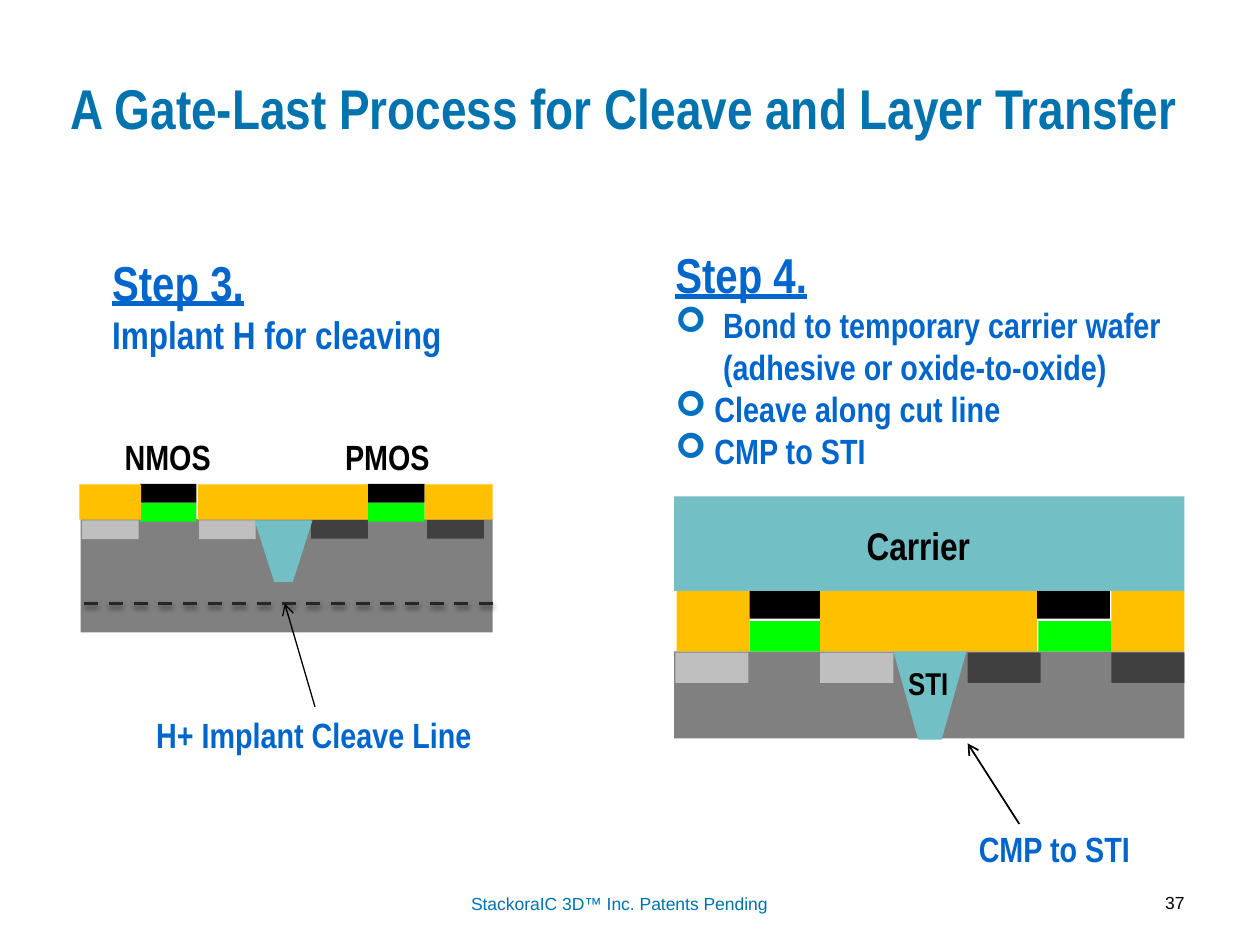
from lxml.etree import SubElement
from pptx import Presentation
from pptx.dml.color import RGBColor
from pptx.enum.dml import MSO_LINE
from pptx.enum.shapes import MSO_CONNECTOR, MSO_SHAPE
from pptx.enum.text import MSO_ANCHOR, MSO_AUTO_SIZE, PP_ALIGN
from pptx.oxml.ns import qn
from pptx.util import Inches, Pt

NARROW = "Arial Narrow"
BLUE, TITLE, BLACK = "0066CC", "0073AE", "000000"
GRAY, LIGHT, DARK = "808080", "BFBFBF", "404040"
GREEN, GOLD, TEAL = "00FF00", "FFC000", "72BFC5"

HEAD = "A Gate-Last Process for Cleave and Layer Transfer"
STEPS = [
    ((0.79, 1.95, 3.04, 0.94), "Step 3.", 22,
     [("Implant H for cleaving", 0)]),
    ((5.26, 1.89, 4.17, 1.92), "Step 4.", 20,
     [("Bond to temporary carrier wafer (adhesive or oxide-to-oxide)", 0.38),
      ("Cleave along cut line", 0.31),
      ("CMP to STI", 0.31)]),
]

# fill, top, height, [(left, width), ...]
LEFT = [
    (GRAY, 4.12, 0.9, [(0.64, 3.27)]),
    (LIGHT, 4.13, 0.15, [(0.65, 0.45), (1.58, 0.45)]),
    (DARK, 4.125, 0.15, [(2.47, 0.45), (3.39, 0.45)]),
    (GREEN, 3.99, 0.15, [(1.11, 0.45), (2.92, 0.45)]),
    (BLACK, 3.84, 0.15, [(1.11, 0.45), (2.92, 0.45)]),
    (GOLD, 3.845, 0.28, [(0.63, 0.49), (1.57, 1.35), (3.37, 0.54)]),
]
RIGHT = [
    (GRAY, 5.17, 0.69, [(5.35, 4.05)]),
    (LIGHT, 5.18, 0.24, [(5.36, 0.58), (6.51, 0.58)]),
    (DARK, 5.18, 0.24, [(7.68, 0.58), (8.82, 0.58)]),
    (GREEN, 4.93, 0.24, [(5.95, 0.58), (8.24, 0.58)]),
    (BLACK, 4.67, 0.24, [(5.94, 0.58), (8.23, 0.58)]),
    (GOLD, 4.69, 0.48, [(5.37, 0.58), (6.51, 1.72), (8.82, 0.58)]),
    (TEAL, 3.94, 0.75, [(5.35, 4.05)]),
]
STI = [(2.02, 4.13, 0.46, 0.49), (7.09, 5.17, 0.58, 0.7)]
LABELS = [
    ("H+ Implant Cleave Line", (1.14, 5.61, 2.72, 0.44), dict(color=BLUE)),
    ("CMP to STI", (7.67, 6.52, 2.03, 0.44), dict(color=BLUE)),
    ("NMOS", (0.89, 3.41, 0.95, 0.44), {}),
    ("PMOS", (2.64, 3.41, 0.96, 0.44), {}),
    ("Carrier", (6.78, 4.09, 1.1, 0.47), dict(size=22)),
    ("STI", (7.11, 5.22, 0.72, 0.4), dict(size=18)),
    ("StackoraIC 3D™ Inc. Patents Pending", (3.33, 7.04, 3.17, 0.26),
     dict(size=10, font="Arial", color=TITLE, bold=False, align=PP_ALIGN.CENTER)),
    ("37", (8.39, 7.03, 1.11, 0.33),
     dict(size=10, font="Arial", bold=False, align=PP_ALIGN.RIGHT)),
]


def rgb(code):
    return RGBColor.from_string(code)


def place(shape, box):
    shape.left, shape.top, shape.width, shape.height = map(Inches, box)
    frame = shape.text_frame
    frame.word_wrap = True
    frame.auto_size = MSO_AUTO_SIZE.NONE
    frame.vertical_anchor = MSO_ANCHOR.TOP
    return frame


def write(para, text, size=20, font=NARROW, color=BLACK, bold=True,
          line=False, align=PP_ALIGN.LEFT, hang=0):
    props = para._p.get_or_add_pPr()
    props.set("marL", str(Inches(hang)))
    props.set("indent", str(-Inches(hang)))
    para.space_before = Pt(0)
    para.alignment = align
    if hang:
        tint = SubElement(props, qn("a:buClr"))
        SubElement(tint, qn("a:srgbClr"), val="0070C0")
        SubElement(props, qn("a:buFont"), typeface="Wingdings")
        SubElement(props, qn("a:buChar"), char="➢")
    else:
        SubElement(props, qn("a:buNone"))
    run = para.add_run()
    run.text = text
    style = run.font
    style.size, style.name = Pt(size), font
    style.bold, style.underline = bold, line
    style.color.rgb = rgb(color)


def block(slide, kind, box, fill):
    shape = slide.shapes.add_shape(kind, *map(Inches, box))
    shape.shadow.inherit = False
    shape.fill.solid()
    shape.fill.fore_color.rgb = rgb(fill)
    shape.line.fill.background()
    return shape


def stack(slide, layers, trench):
    for fill, top, high, spans in layers:
        for left, wide in spans:
            block(slide, MSO_SHAPE.RECTANGLE, (left, top, wide, high), fill)
    shape = block(slide, MSO_SHAPE.TRAPEZOID, trench, TEAL)
    shape.adjustments[0] = 0.34
    shape.rotation = 180


def rule(slide, ends, color, width, arrow=True):
    line = slide.shapes.add_connector(MSO_CONNECTOR.STRAIGHT, *map(Inches, ends))
    line.line.color.rgb = rgb(color)
    line.line.width = Pt(width)
    if arrow:
        SubElement(line.line._get_or_add_ln(), qn("a:tailEnd"), type="arrow")
    else:
        line.line.dash_style = MSO_LINE.DASH
    effect = SubElement(line._element.spPr, qn("a:effectLst"))
    if not arrow:
        glow = SubElement(effect, qn("a:outerShdw"), blurRad=str(Pt(3.1)),
                          dist=str(Pt(1.6)), dir="5400000", rotWithShape="0")
        tint = SubElement(glow, qn("a:srgbClr"), val=BLACK)
        SubElement(tint, qn("a:alpha"), val="38000")


def main():
    deck = Presentation()
    deck.slide_width, deck.slide_height = Inches(10), Inches(7.5)
    slide = deck.slides.add_slide(deck.slide_layouts[3])
    title, *bodies = slide.placeholders
    frame = place(title, (0.46, 0.53, 9.08, 0.64))
    write(frame.paragraphs[0], HEAD, size=32, color=TITLE)
    for body, (box, step, size, items) in zip(bodies, STEPS):
        frame = place(body, box)
        write(frame.paragraphs[0], step, size=28, color=BLUE, line=True)
        for text, hang in items:
            write(frame.add_paragraph(), text, size=size, color=BLUE, hang=hang)

    stack(slide, LEFT, STI[0])
    stack(slide, RIGHT, STI[1])
    rule(slide, (0.67, 4.79, 3.93, 4.79), "262626", 2, arrow=False)
    rule(slide, (2.5, 5.61, 2.26, 4.79), BLACK, 0.75)
    rule(slide, (8.09, 6.54, 7.68, 5.9), BLACK, 1)
    for text, box, style in LABELS:
        frame = place(slide.shapes.add_textbox(0, 0, 0, 0), box)
        write(frame.paragraphs[0], text, **style)
    deck.save("out.pptx")


if __name__ == "__main__":
    main()
